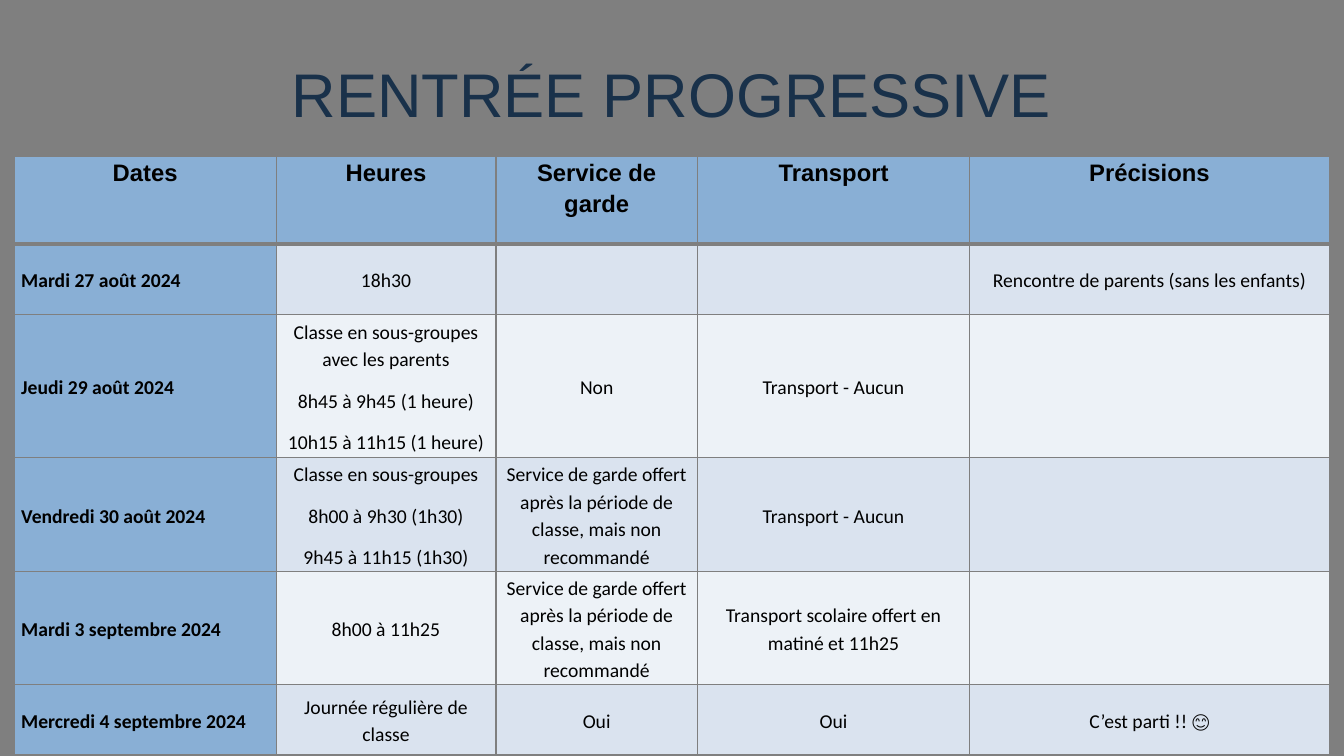
from dataclasses import dataclass

from lxml import etree
from pptx import Presentation
from pptx.dml.color import RGBColor
from pptx.enum.text import MSO_ANCHOR, PP_ALIGN
from pptx.oxml.ns import qn
from pptx.slide import Slide
from pptx.table import _Cell
from pptx.text.text import TextFrame
from pptx.util import Inches, Pt

LEFT, CENTER = PP_ALIGN.LEFT, PP_ALIGN.CENTER
TOP, MIDDLE = MSO_ANCHOR.TOP, MSO_ANCHOR.MIDDLE
WIDE, HIGH = Inches(13.33), Inches(7.5)


@dataclass(frozen=True)
class Theme:
    back: str = "7F7F7F"
    title: str = "19314A"
    ink: str = "000000"
    head: str = "89AFD5"
    bands: tuple[str, str] = ("DAE3EF", "EDF2F7")
    title_font: str = "Arial"
    body_font: str = "Calibri"
    title_size: int = 44
    head_size: int = 17
    body_size: int = 14
    thin: int = 1
    thick: int = 3


@dataclass(frozen=True)
class Day:
    """One line of the schedule; height is a percentage of the slide."""
    height: float
    date: str
    hours: str
    care: str = ""
    bus: str = ""
    note: str = ""

    def texts(self) -> tuple[str, ...]:
        return self.date, self.hours, self.care, self.bus, self.note


THEME = Theme()
CARE = "Service de garde offert après la période de classe, mais non recommandé"
COLS = (19.5, 16.35, 15, 20.25, 26.78)  # percentages of the slide's width
HEAD = Day(11.6, "Dates", "Heures", "Service de garde", "Transport", "Précisions")
DAYS = (
    Day(9.33, "Mardi 27 août 2024", "18h30",
        note="Rencontre de parents (sans les enfants)"),
    Day(18.93, "Jeudi 29 août 2024",
        "Classe en sous-groupes avec les parents\n"
        "8h45 à 9h45 (1 heure)\n10h15 à 11h15 (1 heure)",
        "Non", "Transport - Aucun"),
    Day(15.07, "Vendredi 30 août 2024",
        "Classe en sous-groupes\n8h00 à 9h30 (1h30)\n9h45 à 11h15 (1h30)",
        CARE, "Transport - Aucun"),
    Day(14.93, "Mardi 3 septembre 2024", "8h00 à 11h25", CARE,
        "Transport scolaire offert en matiné et 11h25"),
    Day(9.33, "Mercredi 4 septembre 2024", "Journée régulière de classe",
        "Oui", "Oui", "C’est parti !! 😊"),
)


def across(share: float) -> int:
    return round(WIDE * share / 100)


def down(share: float) -> int:
    return round(HIGH * share / 100)


def write(frame: TextFrame, text: str, *, font: str, size: int, color: str,
          bold: bool = False, align: PP_ALIGN = CENTER,
          line: float = 1.0, after: int = 0) -> None:
    frame.text = text
    for para in frame.paragraphs:
        para.alignment = align
        para.line_spacing = line
        para.space_after = Pt(after)
        para.font.name = font
        para.font.size = Pt(size)
        para.font.bold = bold
        para.font.color.rgb = RGBColor.from_string(color)


def edge(cell: _Cell, top: int, bottom: int) -> None:
    """Draw the four borders, which come before the fill in the cell's XML."""
    props = cell._tc.get_or_add_tcPr()
    sides = {"lnL": THEME.thin, "lnR": THEME.thin, "lnT": top, "lnB": bottom}
    for spot, (side, width) in enumerate(sides.items()):
        line = etree.Element(qn(f"a:{side}"), w=str(Pt(width)))
        fill = etree.SubElement(line, qn("a:solidFill"))
        etree.SubElement(fill, qn("a:srgbClr"), val=THEME.back)
        props.insert(spot, line)


def paint(cell: _Cell, text: str, row: int, col: int) -> None:
    head = row == 0
    cell.fill.solid()
    shade = THEME.head if head or col == 0 else THEME.bands[(row - 1) % 2]
    cell.fill.fore_color.rgb = RGBColor.from_string(shade)
    edge(cell, THEME.thick if row == 1 else THEME.thin,
         THEME.thick if head else THEME.thin)
    cell.vertical_anchor = TOP if head else MIDDLE
    cell.margin_left = cell.margin_right = Inches(0.09 if head else 0.07)
    cell.margin_top = cell.margin_bottom = 0
    write(cell.text_frame, text,
          font=THEME.title_font if head else THEME.body_font,
          size=THEME.head_size if head else THEME.body_size,
          color=THEME.ink, bold=head or col == 0,
          align=LEFT if col == 0 and not head else CENTER,
          line=1.15, after=10)


def add_title(slide: Slide, text: str) -> None:
    title = slide.shapes.title
    title.left, title.top = across(5), down(4)
    title.width, title.height = across(90), down(16.67)
    title.text_frame.vertical_anchor = MIDDLE
    write(title.text_frame, text, font=THEME.title_font,
          size=THEME.title_size, color=THEME.title)


def add_plan(slide: Slide, days: tuple[Day, ...]) -> None:
    frame = slide.shapes.add_table(
        len(days), len(COLS), across(1.05), down(20.67),
        across(sum(COLS)), down(sum(day.height for day in days)))
    table = frame.table
    for col, share in zip(table.columns, COLS):
        col.width = across(share)
    for row, day in enumerate(days):
        table.rows[row].height = down(day.height)
        for col, text in enumerate(day.texts()):
            paint(table.cell(row, col), text, row, col)


def main() -> None:
    deck = Presentation()
    deck.slide_width, deck.slide_height = WIDE, HIGH
    slide = deck.slides.add_slide(deck.slide_layouts[5])

    # Background
    slide.background.fill.solid()
    slide.background.fill.fore_color.rgb = RGBColor.from_string(THEME.back)

    # Title and schedule
    add_title(slide, "RENTRÉE PROGRESSIVE")
    add_plan(slide, (HEAD, *DAYS))
    deck.save("out.pptx")


if __name__ == "__main__":
    main()
